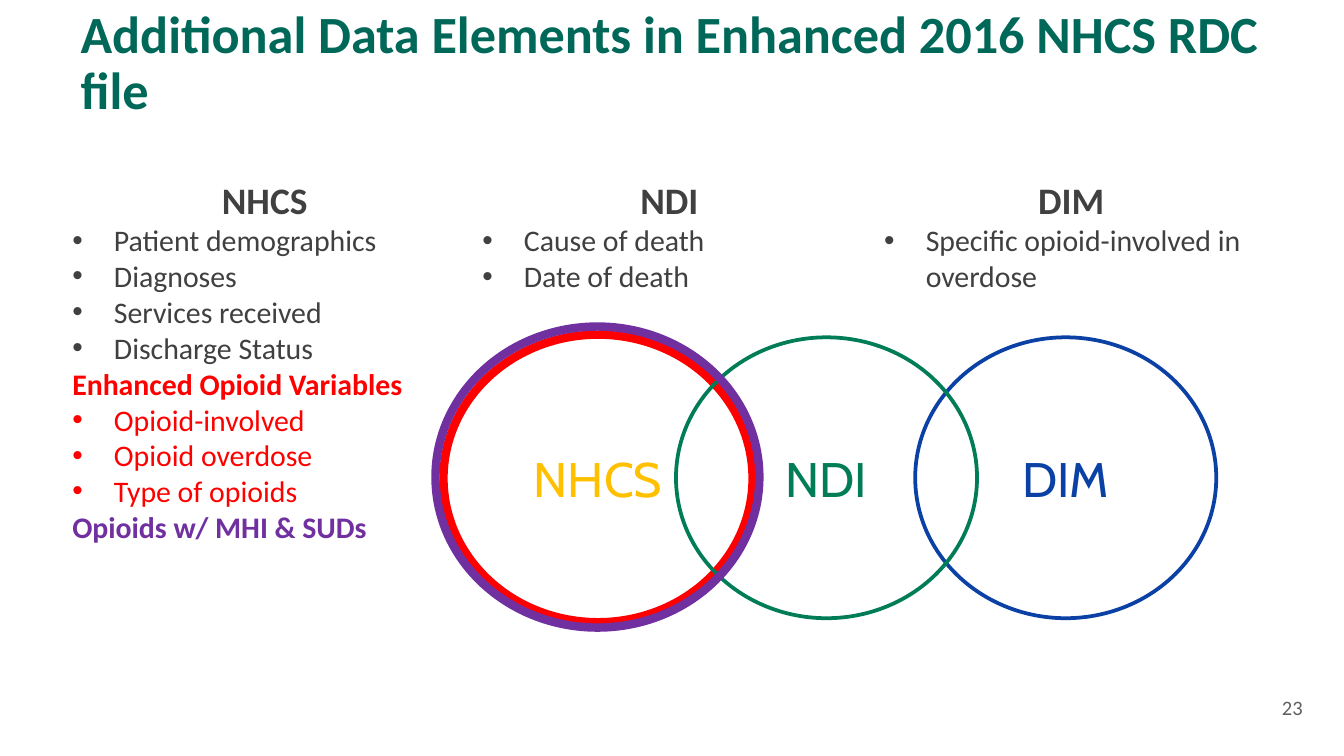
import pptx
import pptx.dml.color
import pptx.enum.shapes
import pptx.enum.text
import pptx.oxml
import pptx.oxml.ns
import pptx.util
from pptx.util import Inches

ALIGN = pptx.enum.text.PP_ALIGN
ANCHOR = pptx.enum.text.MSO_ANCHOR
COLORS = {"title": "006858", "text": "404040", "number": "5F5F5F", "red": "FF0000",
          "purple": "7030A0", "gold": "FFC000", "green": "007D57", "blue": "0B41A5"}
FORMATS = {
    "title": {"size": 28, "bold": True, "color": "title"},
    "number": {"size": 11, "color": "number"},
    "heading": {"size": 20, "bold": True, "color": "text"},
    "item": {"size": 16, "color": "text"},
    "red item": {"size": 16, "color": "red"},
    "red label": {"size": 16, "bold": True, "color": "red"},
    "purple label": {"size": 16, "bold": True, "color": "purple"},
}
INDENT = Inches(0.31)

# Column box and its (format, text) lines below the heading
COLUMNS = [
    ((0.44, 1.27, 3.06, 2.86), "NHCS", [
        ("item", "Patient demographics"), ("item", "Diagnoses"),
        ("item", "Services received"), ("item", "Discharge Status"),
        ("red label", "Enhanced Opioid Variables"),
        ("red item", "Opioid-involved"), ("red item", "Opioid overdose"),
        ("red item", "Type of opioids"),
        ("purple label", "Opioids w/ MHI & SUDs")]),
    ((3.49, 1.27, 2.98, 0.98), "NDI", [
        ("item", "Cause of death"), ("item", "Date of death")]),
    ((6.48, 1.27, 2.98, 0.98), "DIM", [
        ("item", "Specific opioid-involved in overdose")]),
]
# Circle box relative to the diagram, outline colour and width, label, label colour
CIRCLES = [
    ((0.06, 0.06, 2.3, 2.14), "red", 4.5, "NHCS", "gold"),
    ((3.57, 0.08, 2.24, 2.09), "blue", 2, "DIM", "blue"),
    ((1.79, 0.08, 2.24, 2.09), "green", 2, "NDI", "green"),
    ((0, 0, 2.41, 2.24), "purple", 4.5, "", "purple"),
]


def rgb(name):
    return pptx.dml.color.RGBColor.from_string(COLORS[name])


def add_run(p, text, size, color, name="Calibri", bold=False):
    r = p.add_run()
    r.text = text
    values = {"size": pptx.util.Pt(size), "name": name, "bold": bold}
    for key, value in values.items():
        setattr(r.font, key, value)
    r.font.color.rgb = rgb(color)


def add_bullet(p):
    pPr = p._p.get_or_add_pPr()
    pPr.set("marL", str(INDENT))
    pPr.set("indent", str(-INDENT))
    for tag, key, value in (("a:buFont", "typeface", "Arial"), ("a:buChar", "char", "•")):
        bullet = pptx.oxml.parse_xml(f"<{tag} {pptx.oxml.ns.nsdecls('a')}/>")
        bullet.set(key, value)
        pPr.append(bullet)


def add_text_box(s, box):
    tf = s.shapes.add_textbox(*map(Inches, box)).text_frame
    tf.word_wrap = True
    return tf


def add_title(s, box, text):
    sp = s.shapes.title
    for key, value in zip(("left", "top", "width", "height"), box):
        setattr(sp, key, Inches(value))
    tf = sp.text_frame
    tf.auto_size = pptx.enum.text.MSO_AUTO_SIZE.NONE
    tf.vertical_anchor = ANCHOR.BOTTOM
    p = tf.paragraphs[0]
    p.alignment = ALIGN.LEFT
    p.line_spacing = pptx.util.Pt(30)
    add_run(p, text, **FORMATS["title"])


def add_column(s, box, heading, lines):
    tf = add_text_box(s, box)
    p = tf.paragraphs[0]
    p.alignment = ALIGN.CENTER
    add_run(p, heading, **FORMATS["heading"])
    for style, text in lines:
        p = tf.add_paragraph()
        if style.endswith("item"):
            add_bullet(p)
        add_run(p, text, **FORMATS[style])


def add_venn(s, left, top):
    for (x, y, w, h), line, width, label, color in CIRCLES:
        sp = s.shapes.add_shape(pptx.enum.shapes.MSO_SHAPE.OVAL, Inches(left + x),
                                Inches(top + y), Inches(w), Inches(h))
        sp.shadow.inherit = False
        sp.fill.background()
        sp.line.color.rgb = rgb(line)
        sp.line.width = pptx.util.Pt(width)
        if label:
            tf = sp.text_frame
            tf.vertical_anchor = ANCHOR.MIDDLE
            p = tf.paragraphs[0]
            p.alignment = ALIGN.CENTER
            add_run(p, label, 26, color, name="Cabin")


def add_page_number(s, box, number):
    add_run(add_text_box(s, box).paragraphs[0], number, **FORMATS["number"])


def main():
    prs = pptx.Presentation()
    # Widescreen, 16:9
    prs.slide_width = Inches(10)
    prs.slide_height = prs.slide_width * 9 // 16
    s = prs.slides.add_slide(prs.slide_layouts[5])
    add_title(s, (0.5, 0, 9, 0.94), "Additional Data Elements in Enhanced 2016 NHCS RDC file")
    for box, heading, lines in COLUMNS:
        add_column(s, box, heading, lines)
    add_venn(s, 3.24, 2.43)
    add_page_number(s, (9.44, 5.12, 0.41, 0.29), "23")
    prs.save("out.pptx")


if __name__ == "__main__":
    main()
